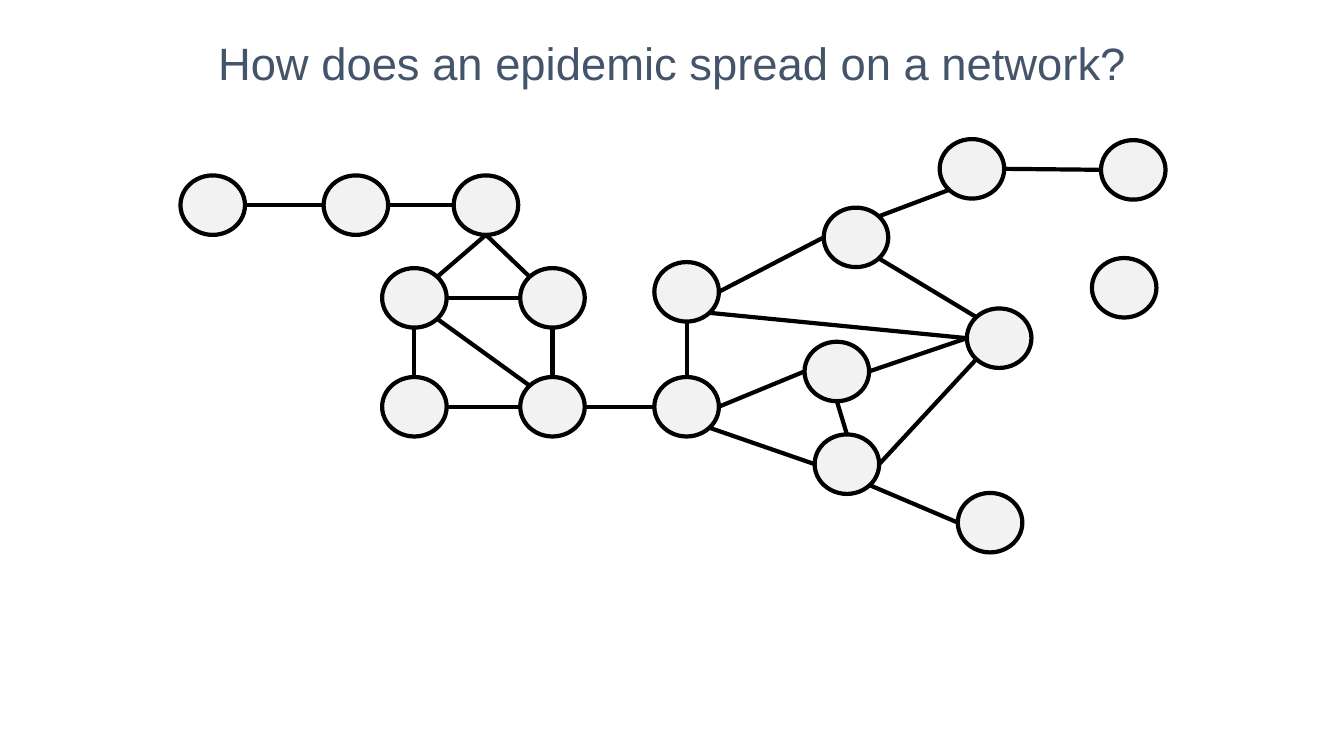
from dataclasses import dataclass
from enum import Enum
from math import sqrt

from lxml import etree
from pptx import Presentation
from pptx.dml.color import RGBColor
from pptx.enum import shapes, text
from pptx.oxml import ns
from pptx.util import Inches, Pt

BLACK = RGBColor(0x00, 0x00, 0x00)
NODE_FILL = RGBColor(0xF2, 0xF2, 0xF2)
TITLE_COLOR = RGBColor(0x44, 0x54, 0x6A)
NODE_W, NODE_H = 0.64, 0.59
LINE_WIDTH = Pt(3)
DIAGONAL = sqrt(0.5)


class Site(Enum):
    TOP = (0, -1)
    BOTTOM = (0, 1)
    LEFT = (-1, 0)
    RIGHT = (1, 0)
    TOP_LEFT = (-DIAGONAL, -DIAGONAL)
    TOP_RIGHT = (DIAGONAL, -DIAGONAL)
    BOTTOM_LEFT = (-DIAGONAL, DIAGONAL)
    BOTTOM_RIGHT = (DIAGONAL, DIAGONAL)


@dataclass(frozen=True)
class Node:
    left: float
    top: float

    def point(self, site: Site) -> tuple[float, float]:
        dx, dy = site.value
        return (self.left + NODE_W / 2 * (1 + dx),
                self.top + NODE_H / 2 * (1 + dy))


@dataclass(frozen=True)
class Edge:
    start: str
    start_site: Site
    end: str
    end_site: Site


NODES = {
    "chain_start": Node(1.79, 1.74),
    "chain_middle": Node(3.21, 1.74),
    "roof": Node(4.5, 1.74),
    "square_top_left": Node(3.79, 2.66),
    "square_top_right": Node(5.16, 2.66),
    "square_bottom_left": Node(3.79, 3.74),
    "square_bottom_right": Node(5.16, 3.74),
    "bridge": Node(6.49, 3.74),
    "gate": Node(6.49, 2.6),
    "inner": Node(7.98, 3.39),
    "lower": Node(8.08, 4.31),
    "upper": Node(8.17, 2.06),
    "hub": Node(9.59, 3.06),
    "branch": Node(9.32, 1.38),
    "branch_end": Node(10.92, 1.39),
    "tail": Node(9.5, 4.89),
    "isolated": Node(10.83, 2.56),
}

EDGES = [
    Edge("chain_start", Site.RIGHT, "chain_middle", Site.LEFT),
    Edge("chain_middle", Site.RIGHT, "roof", Site.LEFT),
    Edge("roof", Site.BOTTOM, "square_top_left", Site.TOP_RIGHT),
    Edge("roof", Site.BOTTOM, "square_top_right", Site.TOP_LEFT),
    Edge("square_top_left", Site.RIGHT, "square_top_right", Site.LEFT),
    Edge("square_top_left", Site.BOTTOM, "square_bottom_left", Site.TOP),
    Edge("square_top_left", Site.BOTTOM_RIGHT, "square_bottom_right", Site.TOP_LEFT),
    Edge("square_top_right", Site.BOTTOM, "square_bottom_right", Site.TOP),
    Edge("square_bottom_left", Site.RIGHT, "square_bottom_right", Site.LEFT),
    Edge("square_bottom_right", Site.RIGHT, "bridge", Site.LEFT),
    Edge("bridge", Site.TOP, "gate", Site.BOTTOM),
    Edge("bridge", Site.RIGHT, "inner", Site.LEFT),
    Edge("bridge", Site.BOTTOM_RIGHT, "lower", Site.LEFT),
    Edge("gate", Site.RIGHT, "upper", Site.LEFT),
    Edge("gate", Site.BOTTOM_RIGHT, "hub", Site.LEFT),
    Edge("inner", Site.BOTTOM, "lower", Site.TOP),
    Edge("inner", Site.RIGHT, "hub", Site.LEFT),
    Edge("lower", Site.RIGHT, "hub", Site.BOTTOM_LEFT),
    Edge("lower", Site.BOTTOM_RIGHT, "tail", Site.LEFT),
    Edge("upper", Site.BOTTOM_RIGHT, "hub", Site.TOP_LEFT),
    Edge("upper", Site.TOP_RIGHT, "branch", Site.BOTTOM_LEFT),
    Edge("branch", Site.RIGHT, "branch_end", Site.LEFT),
]


def draw_node(s, node: Node) -> None:
    sp = s.shapes.add_shape(shapes.MSO_SHAPE.OVAL, Inches(node.left), Inches(node.top),
                            Inches(NODE_W), Inches(NODE_H))
    sp.shadow.inherit = False
    sp.fill.solid()
    sp.fill.fore_color.rgb = NODE_FILL
    sp.line.color.rgb = BLACK
    sp.line.width = LINE_WIDTH


def draw_edge(s, edge: Edge) -> None:
    x1, y1 = NODES[edge.start].point(edge.start_site)
    x2, y2 = NODES[edge.end].point(edge.end_site)
    cxn = s.shapes.add_connector(shapes.MSO_CONNECTOR.STRAIGHT,
                                 Inches(x1), Inches(y1), Inches(x2), Inches(y2))
    cxn.line.color.rgb = BLACK
    cxn.line.width = LINE_WIDTH
    etree.SubElement(cxn._element.spPr, ns.qn("a:effectLst"))


def draw_title(s, title: str) -> None:
    sp = s.shapes.add_textbox(Inches(1.88), Inches(0.3), Inches(9.57), Inches(0.85))
    tf = sp.text_frame
    tf.word_wrap = True
    tf.vertical_anchor = text.MSO_ANCHOR.TOP
    tf.text = title
    p = tf.paragraphs[0]
    p.alignment = text.PP_ALIGN.CENTER
    r = p.runs[0]
    r.font.name = "Arial"
    r.font.size = Pt(32.4)
    r.font.color.rgb = TITLE_COLOR


def main() -> None:
    prs = Presentation()
    prs.slide_width = Inches(13.33)
    prs.slide_height = Inches(7.5)
    s = prs.slides.add_slide(prs.slide_layouts[6])
    for node in NODES.values():
        draw_node(s, node)
    for edge in EDGES:
        draw_edge(s, edge)
    draw_title(s, "How does an epidemic spread on a network?")
    prs.save("out.pptx")


if __name__ == "__main__":
    main()
